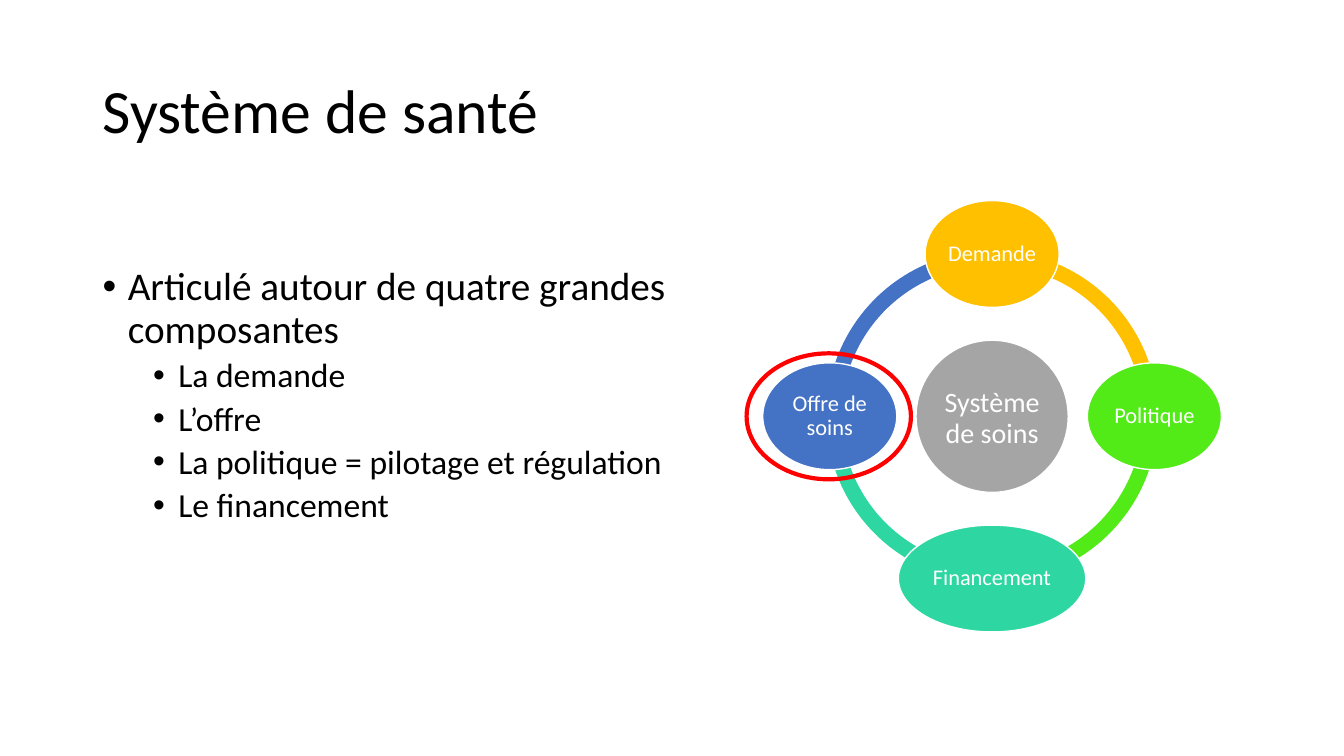
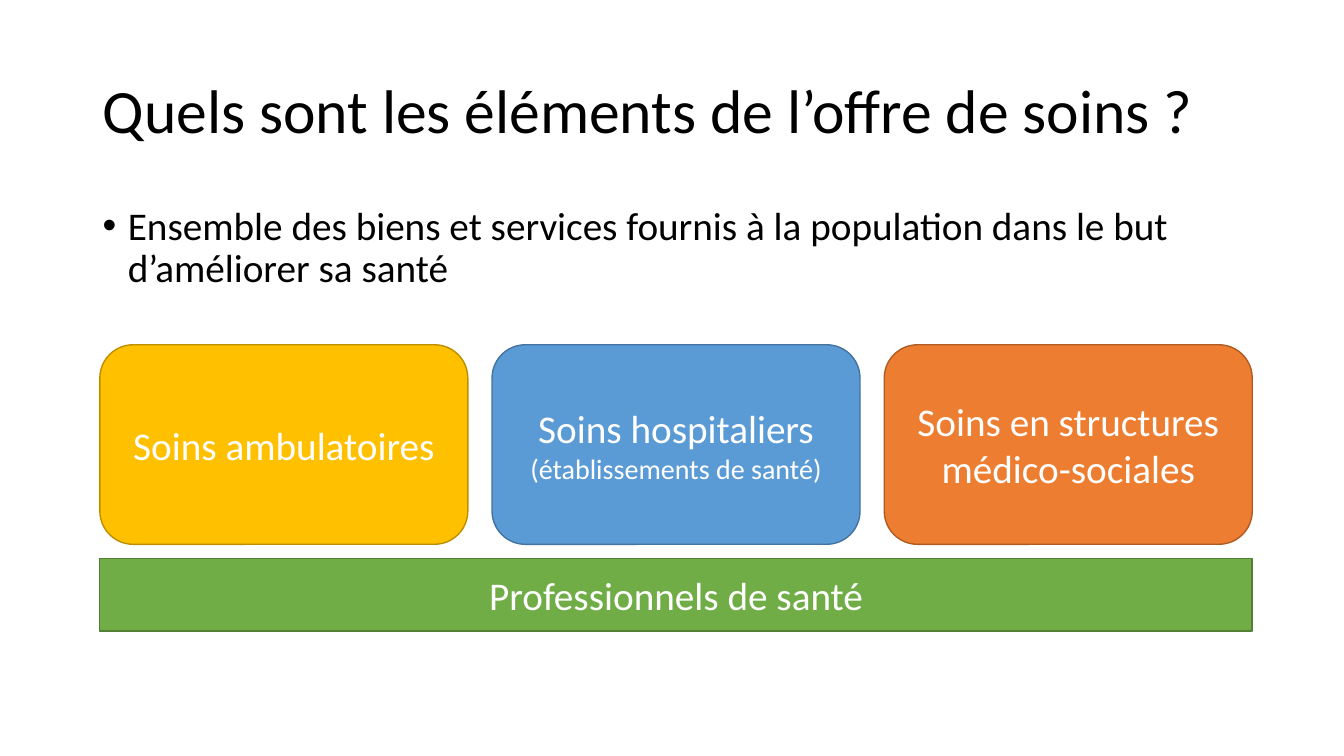
import math

from lxml import etree
from pptx import Presentation
from pptx import util as u
from pptx.dml.color import RGBColor
from pptx.enum import shapes, text
from pptx.oxml import ns

FONT = "Calibri"
COLORS = {
    "black": "000000",
    "white": "FFFFFF",
    "red": "FF0000",
    "grey": "A5A5A5",
    "amber": "FFC000",
    "amber_dark": "BD8E00",
    "lime": "53EB17",
    "teal": "2ED7A1",
    "blue": "4472C4",
    "sky": "5B9BD5",
    "sky_dark": "43739E",
    "orange": "ED7D31",
    "orange_dark": "AF5C24",
    "green": "70AD47",
    "green_dark": "538035",
}
MARGIN = 0.92
CONTENT_W = 11.5
BULLET_LEVELS = [
    {"size": 28, "left": 0.25, "before": 10},
    {"size": 24, "left": 0.75, "before": 5},
]
SHAPE = shapes.MSO_SHAPE


def rgb(name):
    return RGBColor.from_string(COLORS[name])


def add_run(p, content, size, color):
    r = p.add_run()
    r.text = content
    r.font.name = FONT
    r.font.size = u.Pt(size)
    r.font.color.rgb = rgb(color)


def add_box(s, x, y, w, h, anchor=text.MSO_ANCHOR.TOP):
    tf = s.shapes.add_textbox(u.Inches(x), u.Inches(y), u.Inches(w), u.Inches(h)).text_frame
    tf.word_wrap = True
    tf.vertical_anchor = anchor
    return tf


def add_title(s, content):
    p = add_box(s, MARGIN, 0.4, CONTENT_W, 1.45, text.MSO_ANCHOR.MIDDLE).paragraphs[0]
    p.line_spacing = 0.9
    add_run(p, content, 44, "black")


def add_bullets(s, y, w, h, items):
    tf = add_box(s, MARGIN, y, w, h)
    for i, (level, content) in enumerate(items):
        style = BULLET_LEVELS[level]
        p = tf.add_paragraph() if i else tf.paragraphs[0]
        p.level = level
        p.line_spacing = 0.9
        p.space_before = u.Pt(style["before"])
        pPr = p._p.get_or_add_pPr()
        pPr.set("marL", str(u.Inches(style["left"])))
        pPr.set("indent", str(u.Inches(-0.25)))
        etree.SubElement(pPr, ns.qn("a:buFont")).set("typeface", "Arial")
        etree.SubElement(pPr, ns.qn("a:buChar")).set("char", "•")
        add_run(p, content, style["size"], "black")


def add_figure(s, kind, x, y, w, h, fill=None, line=None, line_w=1):
    sp = s.shapes.add_shape(kind, u.Inches(x), u.Inches(y), u.Inches(w), u.Inches(h))
    sp.shadow.inherit = False
    if fill:
        sp.fill.solid()
        sp.fill.fore_color.rgb = rgb(fill)
    else:
        sp.fill.background()
    if line:
        sp.line.color.rgb = rgb(line)
        sp.line.width = u.Pt(line_w)
    else:
        sp.line.fill.background()
    return sp


def add_label(sp, paragraphs, spacing=None, inset=None):
    tf = sp.text_frame
    tf.word_wrap = True
    tf.vertical_anchor = text.MSO_ANCHOR.MIDDLE
    if inset is not None:
        tf.margin_left = tf.margin_right = u.Inches(inset)
        tf.margin_top = tf.margin_bottom = u.Inches(inset)
    for i, runs in enumerate(paragraphs):
        p = tf.add_paragraph() if i else tf.paragraphs[0]
        p.alignment = text.PP_ALIGN.CENTER
        if spacing:
            p.line_spacing = spacing
        for content, size in runs:
            add_run(p, content, size, "white")


def add_ellipse(s, cx, cy, w, h, **style):
    return add_figure(s, SHAPE.OVAL, cx - w / 2, cy - h / 2, w, h, **style)


def add_arc(s, cx, cy, diameter, start, end, color):
    sp = add_figure(s, SHAPE.BLOCK_ARC, cx - diameter / 2, cy - diameter / 2,
                    diameter, diameter, fill=color)
    for i, value in enumerate((start * 0.6, end * 0.6, 0.046)):
        sp.adjustments[i] = value


def add_cycle(s, cx, cy):
    orbit = 1.61
    nodes = [
        ("Politique", "lime", 1.33),
        ("Financement", "teal", 1.86),
        ("Offre de soins", "blue", 1.33),
        ("Demande", "amber", 1.33),
    ]
    for i, (_, color, _) in enumerate(nodes):
        add_arc(s, cx, cy, 3.29, 90 * i, 90 * (i + 1) % 360, color)
    hub = add_ellipse(s, cx, cy, 1.51, 1.51, fill="grey", line="white")
    add_label(hub, [[("Système", 20), (" ", 24), ("de soins", 20)]], 0.9, 0.03)
    for i, (name, color, w) in enumerate(nodes):
        angle = math.radians(90 * i)
        node = add_ellipse(s, cx + orbit * math.cos(angle), cy + orbit * math.sin(angle),
                           w, 1.06, fill=color, line="white")
        add_label(node, [[(name, 16)]], 0.9, 0.02)
    add_ellipse(s, cx - orbit - 0.01, cy, 1.63, 1.25, line="red", line_w=3)


def add_care_blocks(s):
    left, card_w, gap = 0.99, 3.65, 0.24
    cards = [
        ("amber", [[("Soins ambulatoires", 28)]]),
        ("sky", [[("Soins hospitaliers", 28)], [("(établissements de santé)", 20)]]),
        ("orange", [[("Soins en structures médico-sociales", 28)]]),
    ]
    for i, (color, label) in enumerate(cards):
        sp = add_figure(s, SHAPE.ROUNDED_RECTANGLE, left + i * (card_w + gap), 3.42,
                        card_w, 1.98, fill=color, line=color + "_dark")
        add_label(sp, label)
    base = add_figure(s, SHAPE.RECTANGLE, left, 5.54, 3 * card_w + 2 * gap, 0.72,
                      fill="green", line="green_dark")
    add_label(base, [[("Professionnels de santé", 28)]])


def build_system_slide(s):
    add_title(s, "Système de santé")
    add_bullets(s, 2.6, 6.1, 4.15, [
        (0, "Articulé autour de quatre grandes composantes"),
        (1, "La demande"),
        (1, "L’offre"),
        (1, "La politique = pilotage et régulation"),
        (1, "Le financement"),
    ])
    add_cycle(s, 9.84, 4.13)


def build_supply_slide(s):
    add_title(s, "Quels sont les éléments de l’offre de soins ?")
    add_bullets(s, 2, CONTENT_W, 1.2, [
        (0, "Ensemble des biens et services fournis à la population "
            "dans le but d’améliorer sa santé"),
    ])
    add_care_blocks(s)


def main():
    prs = Presentation()
    prs.slide_width = u.Inches(13.33)
    prs.slide_height = u.Inches(7.5)
    for build in (build_system_slide, build_supply_slide):
        build(prs.slides.add_slide(prs.slide_layouts[6]))
    prs.save("out.pptx")


if __name__ == "__main__":
    main()
